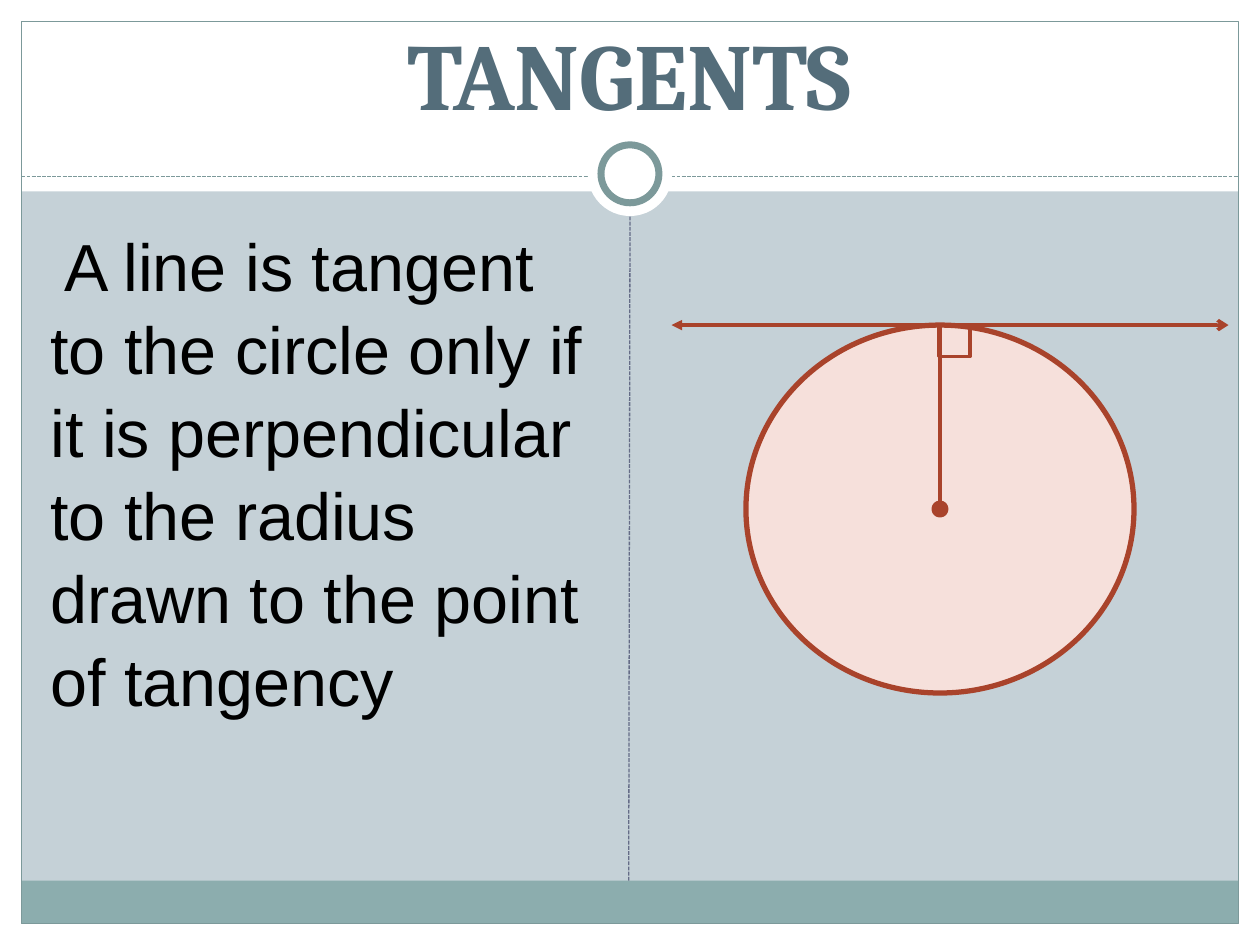
from lxml import etree
from pptx import Presentation
from pptx.dml.color import RGBColor
from pptx.enum.dml import MSO_LINE
from pptx.enum.shapes import MSO_CONNECTOR, MSO_SHAPE
from pptx.enum.text import MSO_ANCHOR, MSO_AUTO_SIZE, PP_ALIGN
from pptx.oxml.ns import qn
from pptx.util import Inches, Pt

RECTANGLE, OVAL = MSO_SHAPE.RECTANGLE, MSO_SHAPE.OVAL
STRAIGHT, DASHED = MSO_CONNECTOR.STRAIGHT, MSO_LINE.SQUARE_DOT
LEFT, CENTER = PP_ALIGN.LEFT, PP_ALIGN.CENTER
TOP, BOTTOM = MSO_ANCHOR.TOP, MSO_ANCHOR.BOTTOM

WHITE = RGBColor(0xFF, 0xFF, 0xFF)
BLACK = RGBColor(0x00, 0x00, 0x00)
BACKGROUND = RGBColor(0xC5, 0xD1, 0xD7)
FOOTER = RGBColor(0x8C, 0xAD, 0xAE)
FRAME = RGBColor(0x7C, 0x99, 0x9A)
DIVIDER = RGBColor(0x64, 0x6B, 0x86)
HEADING = RGBColor(0x54, 0x6D, 0x7A)
RUST = RGBColor(0xA9, 0x43, 0x2B)
BLUSH = RGBColor(0xF6, 0xE0, 0xDB)


def add_figure(page, kind, box, fill=None, line=None, weight=0.75):
    """Add a preset shape; box is left, top, width, height in inches."""
    shape = page.shapes.add_shape(kind, *map(Inches, box))
    shape.shadow.inherit = False
    if fill is None:
        shape.fill.background()
    else:
        shape.fill.solid()
        shape.fill.fore_color.rgb = fill
    if line is None:
        shape.line.fill.background()
    else:
        shape.line.color.rgb = line
        shape.line.width = Pt(weight)
    return shape


def add_line(page, start, end, color, weight=0.75, dash=None, head=None, tail=None):
    line = page.shapes.add_connector(STRAIGHT, *map(Inches, (*start, *end)))
    line.line.color.rgb = color
    line.line.width = Pt(weight)
    if dash is not None:
        line.line.dash_style = dash
    outline = line.line._get_or_add_ln()
    for tag, arrow in (("a:headEnd", head), ("a:tailEnd", tail)):
        if arrow:
            etree.SubElement(outline, qn(tag), type=arrow)
    etree.SubElement(line._element.spPr, qn("a:effectLst"))


def fill_placeholder(page, holder, box, text, *, font, size, color,
                     bold=False, align=LEFT, anchor=TOP):
    """Place and format a placeholder in front of what is already drawn."""
    holder.left, holder.top, holder.width, holder.height = map(Inches, box)
    page.shapes._spTree.append(holder._element)
    frame = holder.text_frame
    frame.word_wrap = True
    frame.auto_size = MSO_AUTO_SIZE.NONE
    frame.vertical_anchor = anchor
    para = frame.paragraphs[0]
    para.alignment = align
    span = para.add_run()
    span.text = text
    span.font.name, span.font.size = font, Pt(size)
    span.font.bold, span.font.color.rgb = bold, color
    return para


def add_backdrop(page, box):
    left, top, width, height = box
    right, bottom, margin = left + width, top + height, 0.17
    center = left + width / 2
    inner_width = width - 2 * margin
    rule_y, ring_y, footer_y = top + 1.4, top + 1.38, bottom - 0.51
    for band in ((left, bottom - margin, width, margin),
                 (left, top, width, 1.52),
                 (left, top, margin, height),
                 (right - margin, top, margin, height)):
        add_figure(page, RECTANGLE, band, fill=WHITE)
    add_figure(page, RECTANGLE, (left + margin, footer_y, inner_width, 0.34), fill=FOOTER)
    add_figure(page, RECTANGLE,
               (left + margin, top + margin, inner_width, height - 2 * margin), line=FRAME)
    add_line(page, (left + margin, rule_y), (right - margin, rule_y), FRAME, dash=DASHED)
    for size, line in ((0.67, None), (0.46, FRAME)):
        add_figure(page, OVAL, (center - size / 2, ring_y - size / 2, size, size),
                   fill=WHITE, line=line, weight=4)
    add_line(page, (center - 0.01, footer_y), (center, 1.72), DIVIDER, dash=DASHED)


def add_title(page, box):
    fill_placeholder(page, page.shapes.title, box, "TANGENTS", font="Cambria", size=54,
                     color=HEADING, bold=True, align=CENTER, anchor=BOTTOM)


def add_theorem(page, box):
    para = fill_placeholder(
        page, page.placeholders[1], box,
        "A line is tangent to the circle only if it is perpendicular "
        "to the radius drawn to the point of tangency",
        font="Arial", size=38, color=BLACK)
    para.line_spacing = 1.04
    para.space_before = Pt(2)
    properties = para._p.get_or_add_pPr()
    properties.set("marL", str(Inches(0.3)))
    properties.set("indent", str(Inches(0.11)))
    etree.SubElement(properties, qn("a:buNone"))


def add_tangent_diagram(page, box):
    """Draw a circle filling the box, with its radius and the tangent at its top."""
    left, top, width, height = box
    center_x, center_y = left + width / 2, top + height / 2
    dot, corner = 0.08, 0.25
    add_figure(page, OVAL, box, fill=BLUSH, line=RUST, weight=3)
    add_line(page, (center_x, top), (center_x, center_y), RUST, weight=2)
    add_figure(page, OVAL, (center_x - dot / 2, center_y - dot / 2, dot, dot),
               fill=RUST, line=RUST, weight=4)
    add_line(page, (left - 0.59, top), (left + width + 0.75, top), RUST,
             weight=2, head="triangle", tail="arrow")
    add_figure(page, RECTANGLE, (center_x - 0.01, top, corner, corner), line=RUST, weight=2)


def main():
    deck = Presentation()
    deck.slide_width, deck.slide_height = Inches(10), Inches(7.5)
    page = deck.slides.add_slide(deck.slide_layouts[1])
    page.background.fill.solid()
    page.background.fill.fore_color.rgb = BACKGROUND
    add_backdrop(page, (0, 0, 10, 7.5))
    add_title(page, (0.33, 0.25, 9.33, 0.83))
    add_theorem(page, (0, 1.71, 4.75, 5.12))
    add_tangent_diagram(page, (5.92, 2.58, 3.08, 2.92))
    deck.save("out.pptx")


if __name__ == "__main__":
    main()
